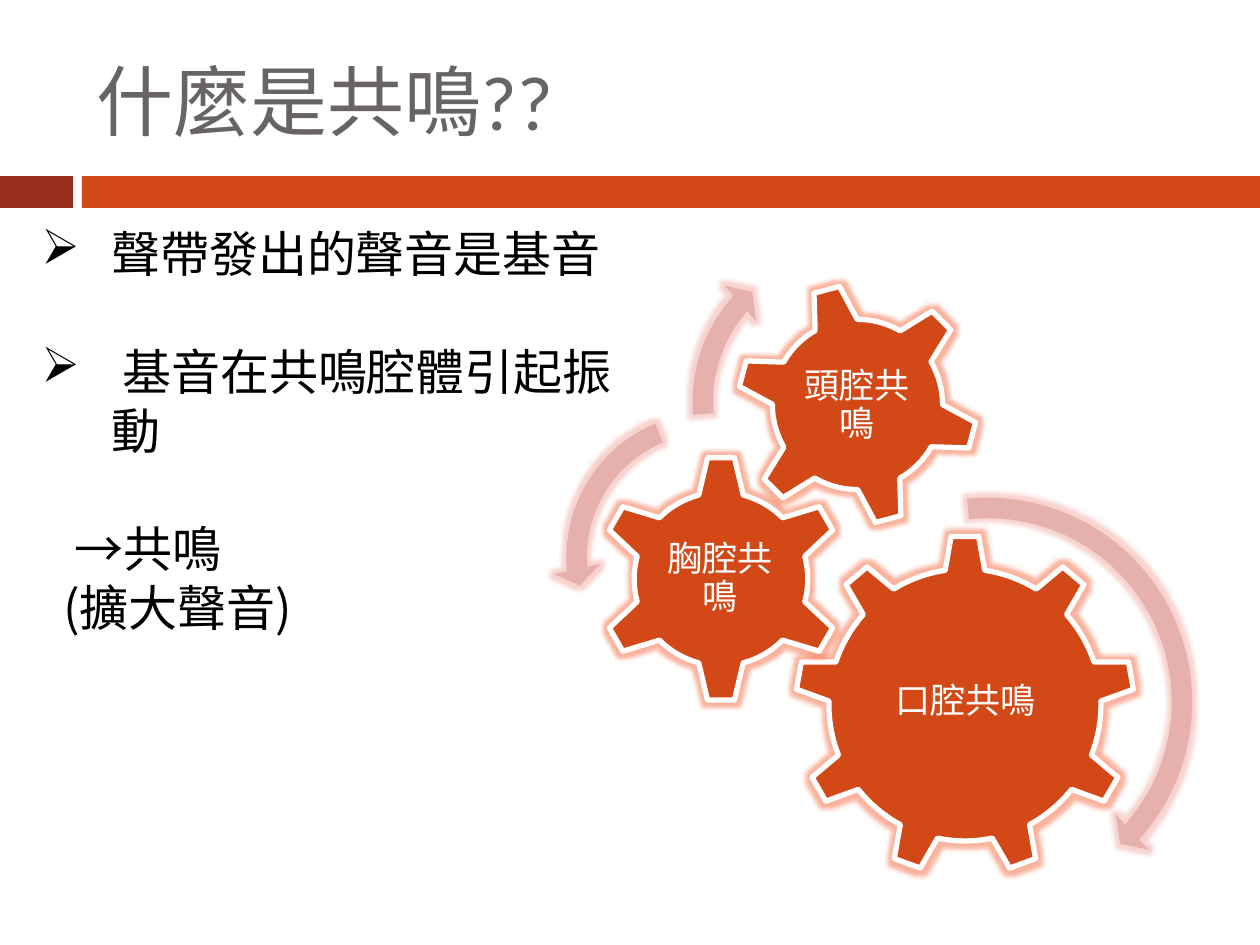
import pptx
import pptx.util
import pptx.dml.color
import pptx.enum.shapes
import pptx.enum.text
from lxml import etree

# Content; every box is left, top, width, height in px
PX = 9144000 // 1260 + 0.14
SHAPE = pptx.enum.shapes.MSO_SHAPE
COLORS = {"title": "696464", "text": "000000", "white": "FFFFFF",
          "dark": "9B2D1F", "orange": "D34817", "arrow": "E6B1AC",
          "gear_glow": "F4683C", "arrow_glow": "F0A8A0"}
TITLE = "什麼是共鳴??"
TITLE_BOX = (84, 32, 1124, 136)
BARS = [((0, 176, 73, 32), "dark"), ((82, 176, 1178, 32), "orange")]
BODY_BOX = (29, 217, 640, 407)
BODY = [
    ("聲帶發出的聲音是基音", dict(bullet="➢", indent=70, hanging=70)),
    (" 基音在共鳴腔體引起振動", dict(bullet="➢", indent=70, hanging=70, before=34)),
    ("→共鳴", dict(indent=33, before=34)),
    ("(擴大聲音)", dict(indent=22)),
]
GEARS = [  # label, shape, box, label box, rotation
    ("口腔共鳴", SHAPE.GEAR_9, (795, 535, 340, 340), (864, 615, 204, 175), 0),
    ("胸腔共鳴", SHAPE.GEAR_6, (597, 455, 248, 248), (659, 518, 123, 122), 0),
    ("頭腔共鳴", SHAPE.GEAR_6, (736, 283, 243, 243), (789, 338, 136, 136), -15),
]
ARROWS = [  # shape, box, adjustments
    (SHAPE.CIRCULAR_ARROW, (770, 484, 436, 436),
     (0.047, 2.99, 25.229, 158.467, 0.055)),
    (SHAPE.LEFT_CIRCULAR_ARROW, (553, 399, 316, 316),
     (0.065, 4.3, 104.891, 148.378, 0.075)),
    (SHAPE.CIRCULAR_ARROW, (679, 231, 341, 341),
     (0.06, 3.941, 133.138, 105.082, 0.07)),
]


def emu(px):
    return pptx.util.Emu(round(px * PX))


def color(name):
    return pptx.dml.color.RGBColor.from_string(COLORS[name])


def add_xml(parent, tag, **attributes):
    name = pptx.oxml.ns.qn(tag)
    return etree.SubElement(parent, name, attributes)


def write_text(para, text, size, ink, font="Calibri", align="LEFT",
               bullet=None, indent=0, hanging=0, before=0, spacing=None):
    span = para.add_run()
    span.text = text
    span.font.size = pptx.util.Pt(size)
    span.font.name = font
    span.font.color.rgb = color(ink)
    para.alignment = getattr(pptx.enum.text.PP_ALIGN, align)
    para.space_before = pptx.util.Pt(before)
    if spacing:
        para.line_spacing = spacing
    properties = para._p.get_or_add_pPr()
    properties.set("marL", str(emu(indent)))
    properties.set("indent", str(-emu(hanging)))
    if bullet:
        add_xml(properties, "a:buChar", char=bullet)


def add_text_box(slide, box, margin=None, anchor="TOP"):
    frame = slide.shapes.add_textbox(*map(emu, box)).text_frame
    frame.word_wrap = True
    frame.vertical_anchor = getattr(pptx.enum.text.MSO_ANCHOR, anchor)
    if margin is not None:
        frame.margin_left = frame.margin_right = emu(margin)
        frame.margin_top = frame.margin_bottom = emu(margin)
    return frame


def add_filled(slide, kind, box, fill, outline=None, glow=None):
    shape = slide.shapes.add_shape(kind, *map(emu, box))
    shape.fill.solid()
    shape.fill.fore_color.rgb = color(fill)
    if outline:
        shape.line.color.rgb = color(outline)
        shape.line.width = pptx.util.Pt(3)
    else:
        shape.line.fill.background()
    shape.shadow.inherit = False
    if glow:
        effects = shape._element.spPr.find(pptx.oxml.ns.qn("a:effectLst"))
        halo = add_xml(effects, "a:glow", rad="63500")
        tint = add_xml(halo, "a:srgbClr", val=COLORS[glow])
        add_xml(tint, "a:alpha", val="50000")
    return shape


def main():
    deck = pptx.Presentation()
    deck.slide_width, deck.slide_height = emu(1260), emu(945)
    page = deck.slides.add_slide(deck.slide_layouts[5])

    # Title and divider bars
    title = page.shapes.title
    title.left, title.top, title.width, title.height = map(emu, TITLE_BOX)
    title.text_frame.vertical_anchor = pptx.enum.text.MSO_ANCHOR.MIDDLE
    write_text(title.text_frame.paragraphs[0], TITLE, 44, "title")
    for box, fill in BARS:
        add_filled(page, SHAPE.RECTANGLE, box, fill)

    # Gears with upright labels
    for label, kind, box, label_box, rotation in GEARS:
        gear = add_filled(page, kind, box, "orange", "white", "gear_glow")
        gear.rotation = rotation
        frame = add_text_box(page, label_box, margin=4, anchor="MIDDLE")
        write_text(frame.paragraphs[0], label, 20, "white", align="CENTER",
                   spacing=0.9)

    # Turning arrows
    for kind, box, adjustments in ARROWS:
        arrow = add_filled(page, kind, box, "arrow", glow="arrow_glow")
        for index, value in enumerate(adjustments):
            arrow.adjustments[index] = value

    # Explanation
    frame = add_text_box(page, BODY_BOX)
    for index, (text, layout) in enumerate(BODY):
        para = frame.add_paragraph() if index else frame.paragraphs[0]
        write_text(para, text, 28, "text", font="Noto Sans CJK SC", **layout)

    deck.save("out.pptx")


if __name__ == "__main__":
    main()
